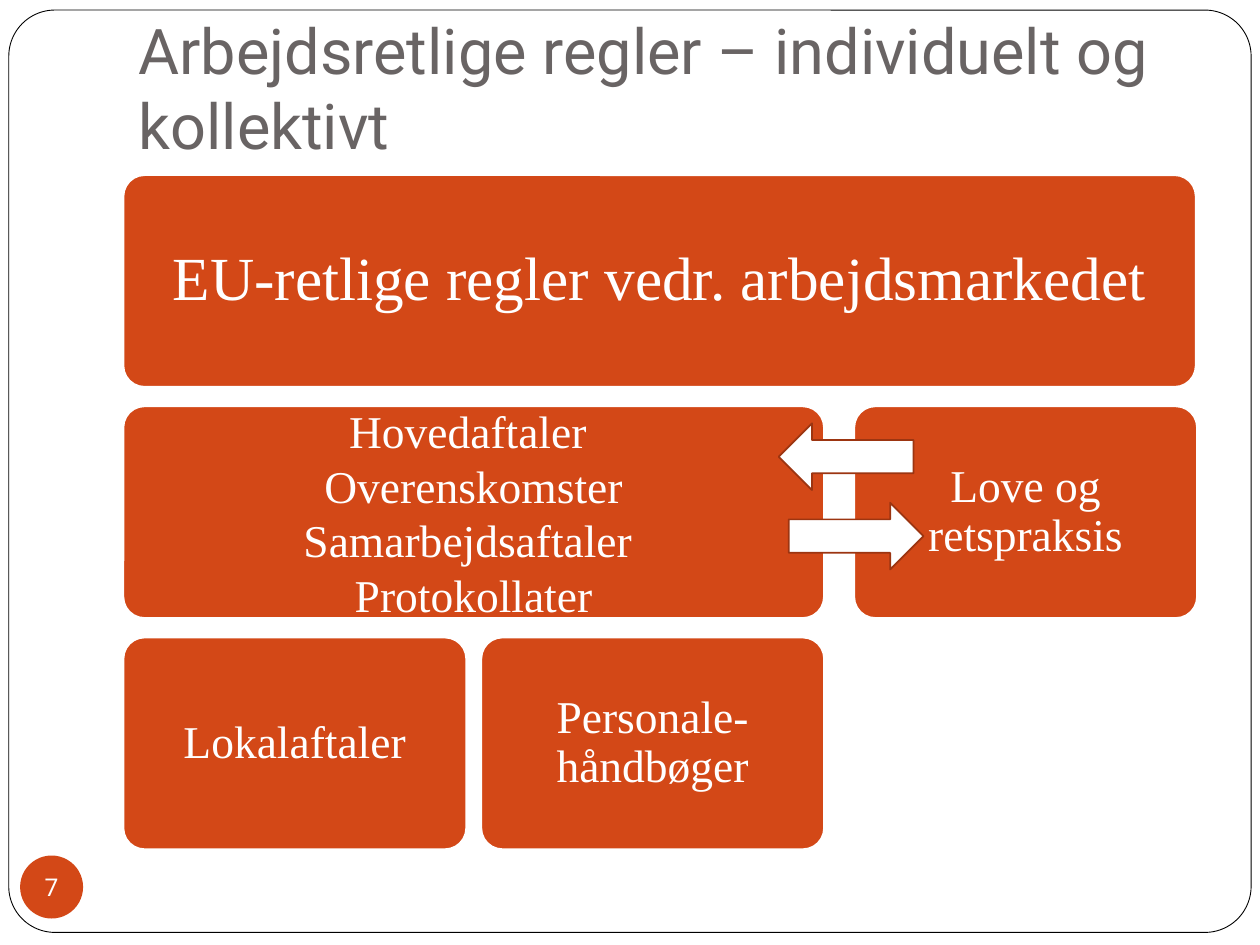
from pptx import Presentation
from pptx.dml.color import RGBColor
from pptx.enum.shapes import MSO_SHAPE as Preset
from pptx.enum.text import MSO_ANCHOR as Anchor, MSO_AUTO_SIZE as AutoSize, PP_ALIGN as Align
from pptx.util import Inches, Pt

ORANGE = RGBColor(0xD3, 0x48, 0x17)
DARK_ORANGE = RGBColor(0x9C, 0x35, 0x11)
GREY = RGBColor(0x69, 0x64, 0x64)
WHITE = RGBColor(0xFF, 0xFF, 0xFF)
BLACK = RGBColor(0, 0, 0)


def add_filled_shape(preset, left, top, width, height, fill, line=None, line_width=1):
    shape = slide.shapes.add_shape(preset, Inches(left), Inches(top), Inches(width), Inches(height))
    shape.shadow.inherit = False
    shape.fill.solid()
    shape.fill.fore_color.rgb = fill
    if line is None:
        shape.line.fill.background()
    else:
        shape.line.color.rgb = line
        shape.line.width = Pt(line_width)
    return shape


def write_lines(text_frame, lines, size, font, color, align, insets, anchor):
    text_frame.auto_size = AutoSize.NONE
    text_frame.vertical_anchor = anchor
    (text_frame.margin_left, text_frame.margin_top,
     text_frame.margin_right, text_frame.margin_bottom) = [Inches(inset) for inset in insets]
    for index, line in enumerate(lines):
        paragraph = text_frame.paragraphs[0] if index == 0 else text_frame.add_paragraph()
        paragraph.alignment = align
        run = paragraph.add_run()
        run.text = line
        run.font.size = Pt(size)
        run.font.name = font
        run.font.color.rgb = color


presentation = Presentation()
presentation.slide_width = Inches(10)
presentation.slide_height = Inches(7.5)
slide = presentation.slides.add_slide(presentation.slide_layouts[5])

title = slide.shapes.title
title.left, title.top, title.width, title.height = Inches(1), Inches(0), Inches(8.5), Inches(1.39)
write_lines(title.text_frame, ["Arbejdsretlige regler – individuelt og kollektivt"], 36, "Roboto",
            GREY, Align.LEFT, (0.1, 0.05, 0.1, 0.1), Anchor.BOTTOM)

frame = add_filled_shape(Preset.ROUNDED_RECTANGLE, 0.07, 0.08, 9.86, 7.32, WHITE, BLACK, 0.5)
frame.adjustments[0] = 0.05
title.element.addprevious(frame.element)

badge = add_filled_shape(Preset.OVAL, 0.16, 6.79, 0.5, 0.5, ORANGE)
write_lines(badge.text_frame, ["7"], 14, "Roboto", WHITE, Align.CENTER, (0, 0, 0, 0), Anchor.MIDDLE)
badge.text_frame.word_wrap = False

FIRST_TOP, ROW_STEP, BOX_HEIGHT = 1.39, 1.835, 1.68
boxes = [
    (0, 0.98, 8.51, 35, 0.2, ["EU-retlige regler vedr. arbejdsmarkedet"]),
    (1, 0.98, 5.56, 26, 0.16,
     ["Hovedaftaler ", "Overenskomster", "Samarbejdsaftaler ", "Protokollater"]),
    (2, 0.98, 2.72, 26, 0.16, ["Lokalaftaler"]),
    (2, 3.82, 2.72, 26, 0.16, ["Personale-håndbøger"]),
    (1, 6.78, 2.72, 26, 0.16, ["Love og retspraksis"]),
]
for row, left, width, size, inset, lines in boxes:
    box = add_filled_shape(Preset.ROUNDED_RECTANGLE, left, FIRST_TOP + row * ROW_STEP,
                           width, BOX_HEIGHT, ORANGE, WHITE)
    box.adjustments[0] = 0.1
    write_lines(box.text_frame, lines, size, "Times New Roman", WHITE, Align.CENTER,
                (inset,) * 4, Anchor.MIDDLE)
    box.text_frame.word_wrap = True
    if len(lines) == 1:
        box.text_frame.paragraphs[0].line_spacing = 0.9

for preset, left, top in [(Preset.LEFT_ARROW, 6.18, 3.36), (Preset.RIGHT_ARROW, 6.26, 3.99)]:
    add_filled_shape(preset, left, top, 1.07, 0.53, WHITE, DARK_ORANGE)

presentation.save("out.pptx")
